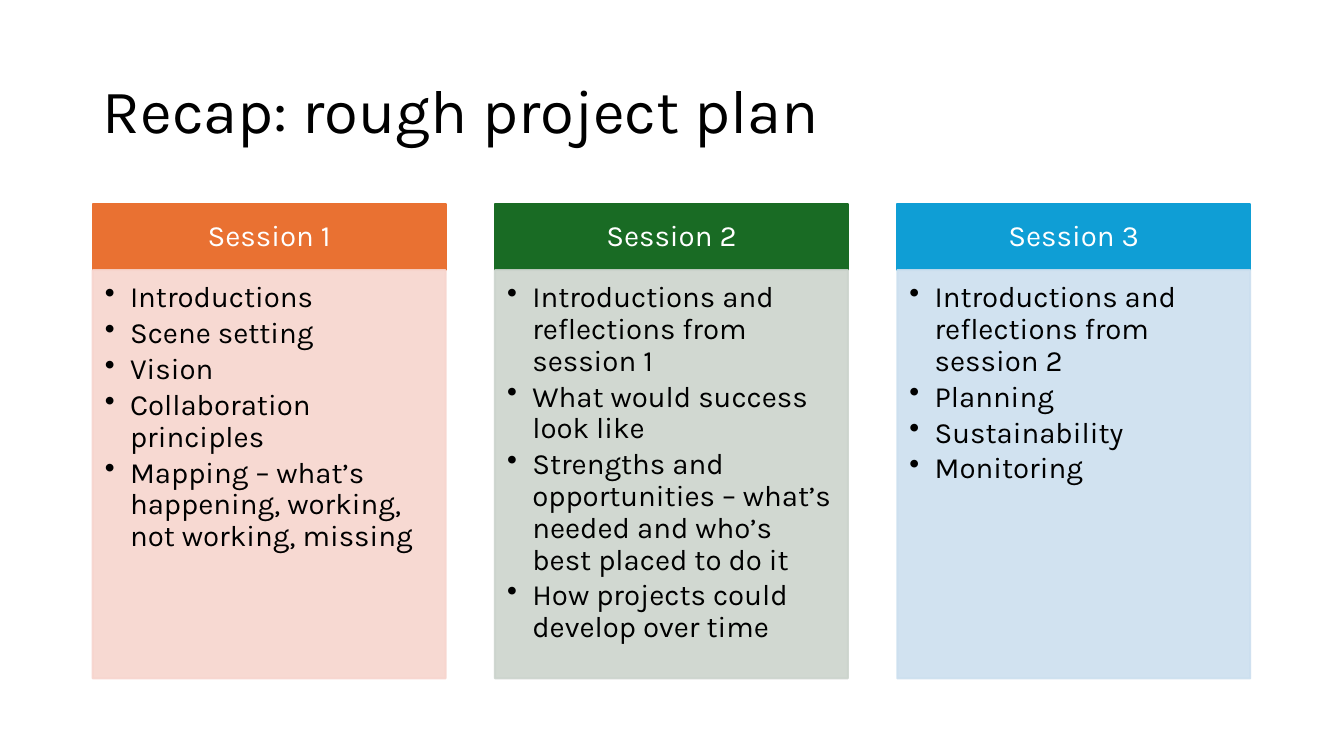
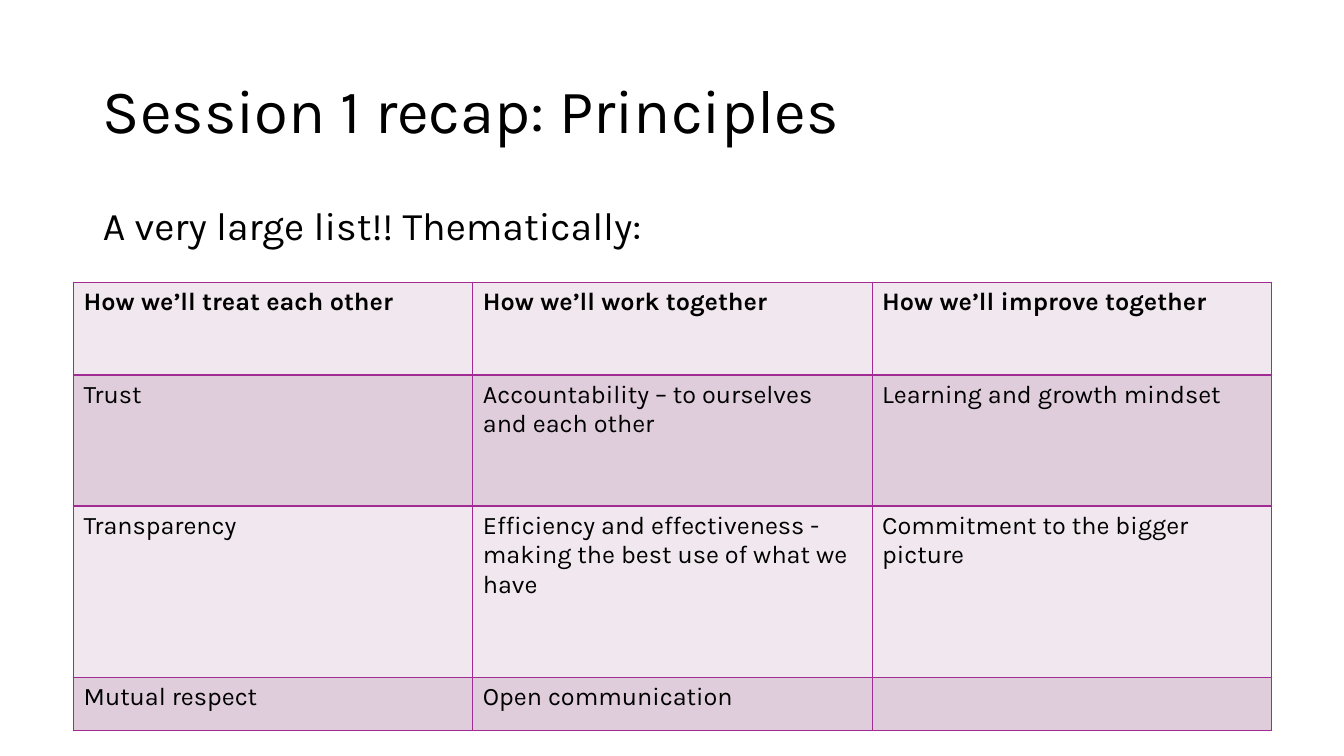
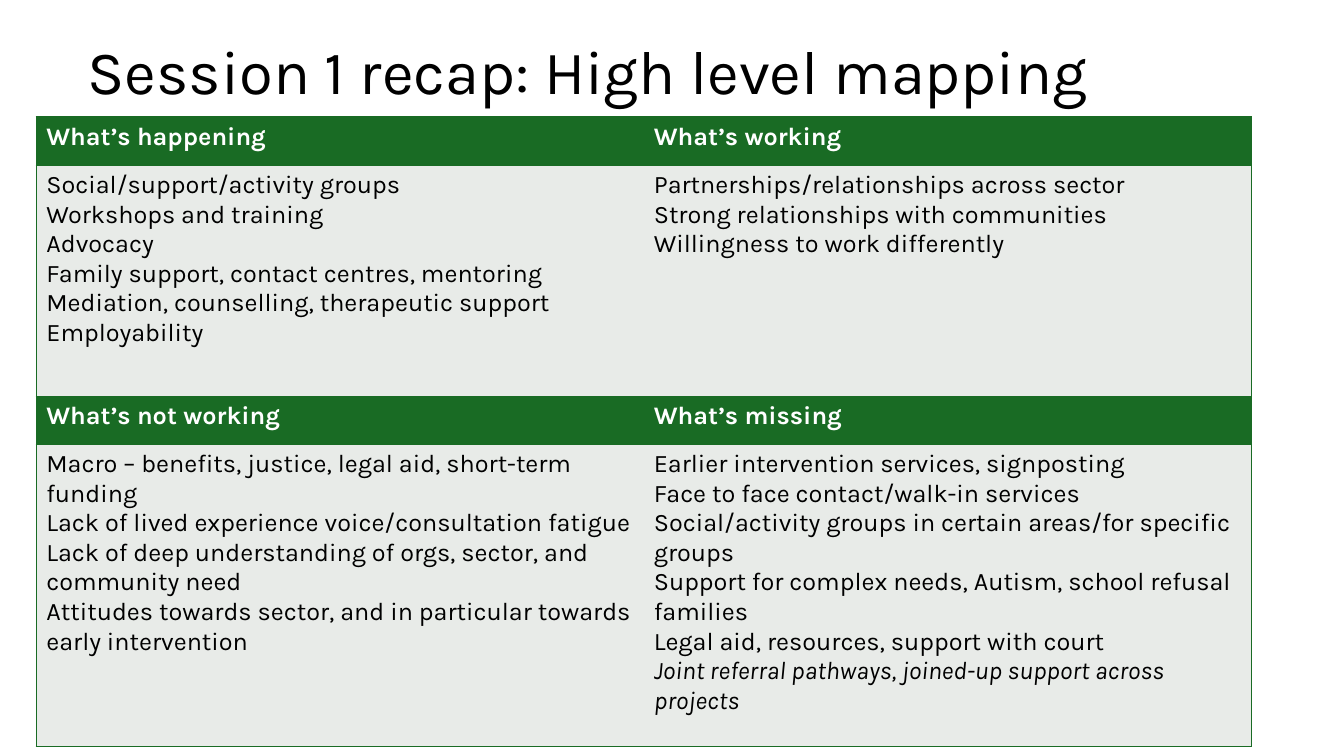
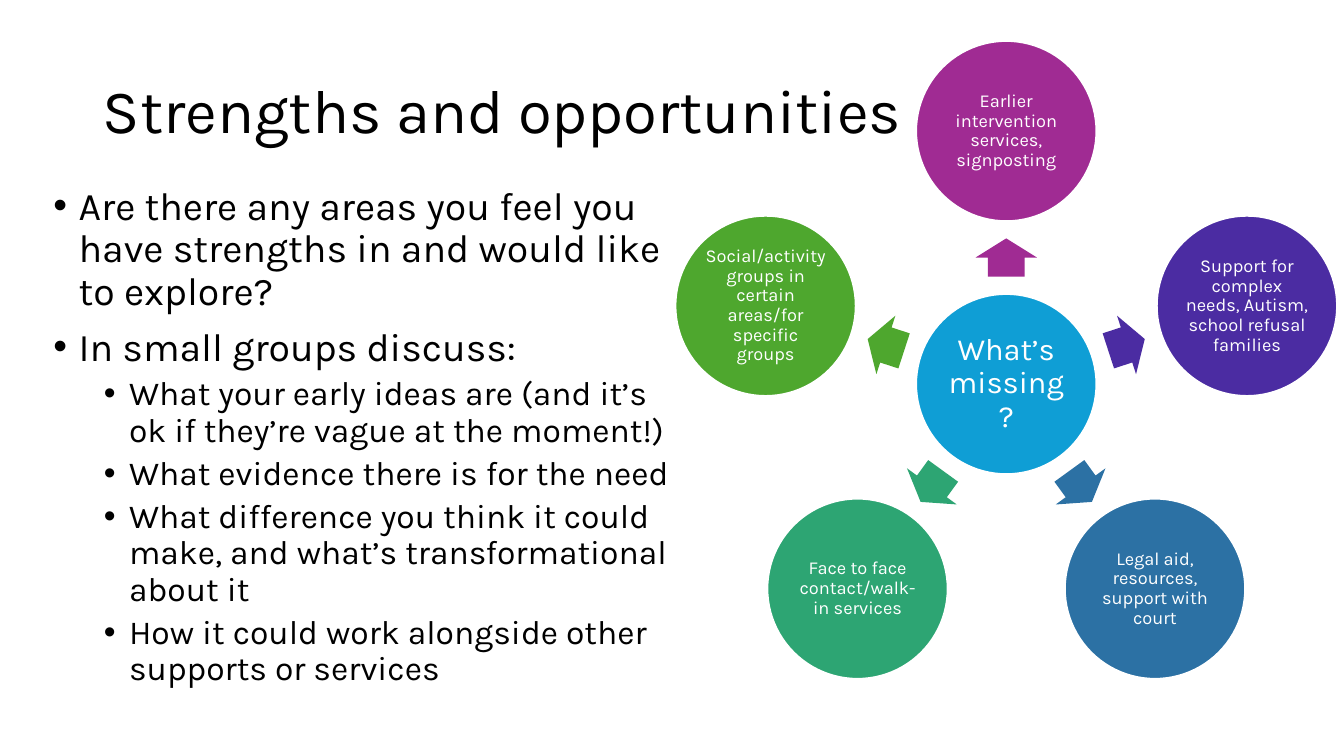
from math import cos, sin, radians
from pptx import Presentation
from pptx.dml.color import RGBColor
from pptx.enum.shapes import MSO_SHAPE as Kind
from pptx.enum.text import MSO_ANCHOR as Anchor, MSO_AUTO_SIZE as Auto, PP_ALIGN as Align
from pptx.oxml.ns import qn
from pptx.oxml.xmlchemy import OxmlElement as Node
from pptx.util import Inches, Pt

FONT = "Karla"
HUES = {
    "ink": "000000", "white": "FFFFFF", "orange": "E97132", "green": "196B24",
    "blue": "0F9ED5", "plum": "A02B93", "peach": "F7D5CE", "sage": "CCD4CD",
    "sky": "CCDFEF", "pale": "F0E8EE", "mauve": "DFCDDC", "mist": "E8EBE8",
    "violet": "4B2CA2", "steel": "2C71A4", "jade": "2DA573", "leaf": "4EA72E",
}
LEFT, WIDE = 0.92, 11.5
TITLE = (LEFT, 0.4, WIDE, 1.45)
BODY = (LEFT, 2, WIDE, 4.76)

# Content
PLAN = [
    ("Session 1", "orange", "peach", [
        "Introductions", "Scene setting", "Vision", "Collaboration principles",
        "Mapping – what’s happening, working, not working, missing"]),
    ("Session 2", "green", "sage", [
        "Introductions and reflections from session 1",
        "What would success look like",
        "Strengths and opportunities – what’s needed and who’s best placed to do it",
        "How projects could develop over time"]),
    ("Session 3", "blue", "sky", [
        "Introductions and reflections from session 2",
        "Planning", "Sustainability", "Monitoring"]),
]
VALUES = [
    ("How we’ll treat each other", "How we’ll work together", "How we’ll improve together"),
    ("Trust", "Accountability – to ourselves and each other", "Learning and growth mindset"),
    ("Transparency", "Efficiency and effectiveness - making the best use of what we have",
     "Commitment to the bigger picture"),
    ("Mutual respect", "Open communication", ""),
]
MAP = [
    ("What’s happening", "What’s working"),
    (["Social/support/activity groups", "Workshops and training", "Advocacy",
      "Family support, contact centres, mentoring",
      "Mediation, counselling, therapeutic support", "Employability"],
     ["Partnerships/relationships across sector", "Strong relationships with communities",
      "Willingness to work differently"]),
    ("What’s not working", "What’s missing"),
    (["Macro – benefits, justice, legal aid, short-term funding",
      "Lack of lived experience voice/consultation fatigue",
      "Lack of deep understanding of orgs, sector, and community need",
      "Attitudes towards sector, and in particular towards early intervention"],
     ["Earlier intervention services, signposting", "Face to face contact/walk-in services",
      "Social/activity groups in certain areas/for specific groups",
      "Support for complex needs, Autism, school refusal families",
      "Legal aid, resources, support with court",
      ("Joint referral pathways, joined-up support across projects", "italic")]),
]
ASKS = [
    (0, "Are there any areas you feel you have strengths in and would like to explore?"),
    (0, "In small groups discuss:"),
    (1, "What your early ideas are (and it’s ok if they’re vague at the moment!)"),
    (1, "What evidence there is for the need"),
    (1, "What difference you think it could make, and what’s transformational about it"),
    (1, "How it could work alongside other supports or services"),
]
NEEDS = [
    ("Earlier intervention services, signposting", "plum"),
    ("Support for complex needs, Autism, school refusal families", "violet"),
    ("Legal aid, resources, support with court", "steel"),
    ("Face to face contact/walk-in services", "jade"),
    ("Social/activity groups in certain areas/for specific groups", "leaf"),
]


# Shared helpers
def tint(hue):
    return RGBColor.from_string(HUES[hue])


def place(shape, box):
    shape.left, shape.top, shape.width, shape.height = map(Inches, box)


def line(frame, index, text, size, hue="ink", bold=False, italic=False):
    """Write one paragraph; the first one is already in the frame."""
    para = frame.paragraphs[0] if index == 0 else frame.add_paragraph()
    para.alignment = Align.LEFT
    run = para.add_run()
    run.text = text
    font = run.font
    font.name, font.size, font.bold, font.italic = FONT, Pt(size), bold, italic
    font.color.rgb = tint(hue)
    return para


def space(para, before=0, after=0):
    para.line_spacing = 0.9
    para.space_before, para.space_after = Pt(before), Pt(after)


def indent(para, left, mark=True):
    props = para._p.get_or_add_pPr()
    props.set("marL", str(Inches(left)))
    props.set("indent", str(Inches(-0.25 if mark else 0)))
    node = Node("a:buChar" if mark else "a:buNone")
    if mark:
        node.set("char", "•")
    props.append(node)


def begin(deck, layout, title):
    slide = deck.slides.add_slide(deck.slide_layouts[layout])
    frame = slide.shapes.title.text_frame
    frame.auto_size = Auto.NONE
    space(line(frame, 0, title, 44))
    return slide


def body(slide):
    holder = slide.placeholders[1]
    holder.text_frame.auto_size = Auto.NONE
    return holder


def draw(slide, kind, box, fill, edge=None):
    shape = slide.shapes.add_shape(kind, *map(Inches, box))
    shape.shadow.inherit = False
    shape.fill.solid()
    shape.fill.fore_color.rgb = tint(fill)
    if edge:
        shape.line.color.rgb = tint(edge)
        shape.line.width = Pt(1.5)
    else:
        shape.line.fill.background()
    return shape


def inset(shape, anchor, pads):
    frame = shape.text_frame
    frame.word_wrap, frame.vertical_anchor = True, anchor
    (frame.margin_left, frame.margin_top,
     frame.margin_right, frame.margin_bottom) = map(Inches, pads)
    return frame


def label(shape, text, size, pads):
    para = line(inset(shape, Anchor.MIDDLE, pads), 0, text, size, "white")
    para.alignment = Align.CENTER
    space(para)


def fade(shape, share):
    for node in shape.element.iter(qn("a:srgbClr")):
        alpha = Node("a:alpha")
        alpha.set("val", str(share * 1000))
        node.append(alpha)


def border(cell, sides, hue):
    props = cell._tc.get_or_add_tcPr()
    for side in "LRTB":
        edge = Node("a:ln" + side)
        edge.set("w", str(Pt(1)))
        if side in sides:
            fill, color = Node("a:solidFill"), Node("a:srgbClr")
            color.set("val", HUES[hue])
            fill.append(color)
        else:
            fill = Node("a:noFill")
        edge.append(fill)
        props.append(edge)


def grid(slide, rows, heights, box, looks, hue, inner):
    """looks(row) gives fill, text colour and bold."""
    count = len(rows[0])
    table = slide.shapes.add_table(len(rows), count, *map(Inches, box)).table
    table.first_row = table.horz_banding = False
    for col in table.columns:
        col.width = Inches(box[2] / count)
    for r, row in enumerate(rows):
        table.rows[r].height = Inches(heights[r])
        fill, ink, bold = looks(r)
        for c, items in enumerate(row):
            cell = table.cell(r, c)
            sides = "TB" + "L" * (inner or c == 0) + "R" * (inner or c == count - 1)
            border(cell, sides, hue)
            cell.fill.solid()
            cell.fill.fore_color.rgb = tint(fill)
            for i, item in enumerate([items] if isinstance(items, str) else items):
                lean = isinstance(item, tuple)
                if item:
                    line(cell.text_frame, i, item[0] if lean else item, 18, ink, bold, lean)


# Slides
def plan(deck):
    slide = begin(deck, 5, "Recap: rough project plan")
    wide, top, head, tall = 3.5, 2.02, 0.66, 4.05
    for i, (name, dark, light, items) in enumerate(PLAN):
        left = LEFT + i * wide * 1.14
        band = draw(slide, Kind.RECTANGLE, (left, top, wide, head), dark, dark)
        label(band, name, 21, (0.16, 0.09, 0.16, 0.09))
        card = draw(slide, Kind.RECTANGLE, (left, top + head, wide, tall), light, light)
        fade(card, 90)
        frame = inset(card, Anchor.TOP, (0.12, 0.12, 0.16, 0.18))
        for j, item in enumerate(items):
            para = line(frame, j, item, 21)
            space(para, after=3)
            indent(para, 0.25)


def values(deck):
    slide = begin(deck, 1, "Session 1 recap: Principles")
    para = line(body(slide).text_frame, 0, "A very large list!! Thematically:", 28)
    space(para, before=10)
    indent(para, 0, mark=False)
    grid(slide, VALUES, (0.92, 1.3, 1.7, 0.53), (0.73, 2.8, 11.88, 4.45),
         lambda r: ("mauve" if r % 2 else "pale", "ink", r == 0), "plum", True)


def mapping(deck):
    slide = begin(deck, 5, "Session 1 recap: High level mapping")
    place(slide.shapes.title, (0.77, 0.01, WIDE, 1.45))
    grid(slide, MAP, (0.48, 2.29, 0.48, 3), (0.36, 1.16, 12.05, 6.25),
         lambda r: ("mist", "ink", False) if r % 2 else ("green", "white", True),
         "green", False)


def wheel(deck):
    slide = begin(deck, 1, "Strengths and opportunities")
    holder = body(slide)
    place(holder, (0.43, 1.8, 6.49, 5.31))
    for i, (level, text) in enumerate(ASKS):
        para = line(holder.text_frame, i, text, 24 if level else 28)
        para.level = level
        space(para, before=5 if level else 10)
        indent(para, 0.75 if level else 0.25)

    # Hub, then an arrow and a circle for each need
    mid, size, reach = (9.98, 3.81), 1.79, 2.51

    def around(angle, far, wide, tall):
        turn = radians(angle)
        return (mid[0] + far * cos(turn) - wide / 2,
                mid[1] + far * sin(turn) - tall / 2, wide, tall)

    hub = draw(slide, Kind.OVAL, around(0, 0, size, size), "blue", "white")
    label(hub, "What’s missing?", 22, [0.03] * 4)
    for i, (text, hue) in enumerate(NEEDS):
        angle = i * 360 / len(NEEDS) - 90
        arrow = draw(slide, Kind.RIGHT_ARROW, around(angle, reach / 2, 0.38, 0.61), hue)
        arrow.adjustments[0], arrow.adjustments[1] = 0.6, 0.5
        arrow.rotation = angle % 360
        disc = draw(slide, Kind.OVAL, around(angle, reach, size, size), hue, "white")
        label(disc, text, 13, [0.02] * 4)


def main():
    deck = Presentation()
    deck.slide_width, deck.slide_height = Inches(13.33), Inches(7.5)
    for holder, box in zip(deck.slide_master.placeholders, (TITLE, BODY)):
        place(holder, box)
    for build in (plan, values, mapping, wheel):
        build(deck)
    deck.save("out.pptx")


if __name__ == "__main__":
    main()
